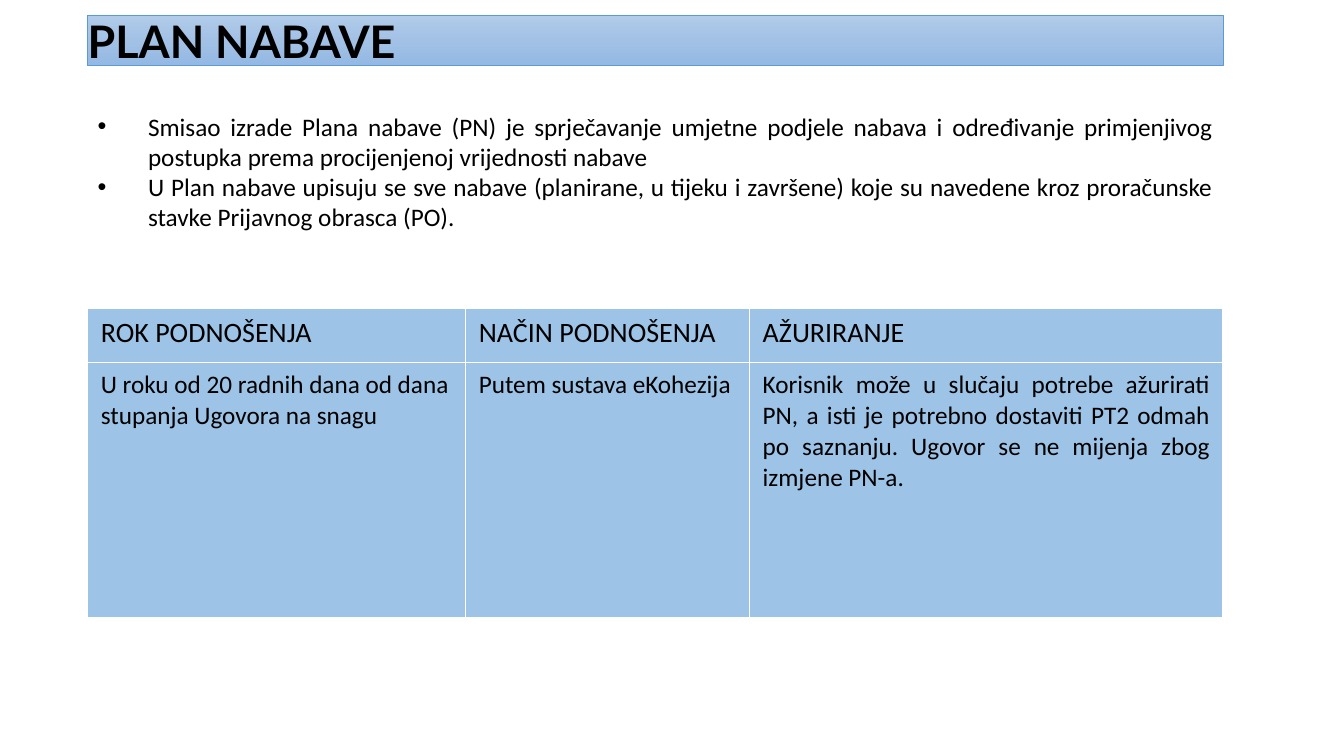
from copy import deepcopy

from lxml.etree import SubElement
from pptx import Presentation
from pptx.dml.color import RGBColor
from pptx.enum.shapes import MSO_SHAPE as Shape
from pptx.enum.text import MSO_ANCHOR as Anchor, PP_ALIGN as Align
from pptx.oxml.ns import qn
from pptx.util import Inches, Pt

# Content
TITLE = "PLAN NABAVE"
BULLETS = [
    "Smisao izrade Plana nabave (PN) je sprječavanje umjetne podjele nabava i određivanje "
    "primjenjivog postupka prema procijenjenoj vrijednosti nabave",
    "U Plan nabave upisuju se sve nabave (planirane, u tijeku i završene) koje su navedene "
    "kroz proračunske stavke Prijavnog obrasca (PO).",
]
TABLE = [
    ["ROK PODNOŠENJA", "NAČIN PODNOŠENJA", "AŽURIRANJE"],
    ["U roku od 20 radnih dana od dana stupanja Ugovora na snagu",
     "Putem sustava eKohezija",
     "Korisnik može u slučaju potrebe ažurirati PN, a isti je potrebno dostaviti PT2 odmah "
     "po saznanju. Ugovor se ne mijenja zbog izmjene PN-a."],
]

# Colours
BLACK = RGBColor(0x00, 0x00, 0x00)
WHITE = RGBColor(0xFF, 0xFF, 0xFF)
OUTLINE = RGBColor(0x5B, 0x9B, 0xD5)
CELL_BLUE = RGBColor(0x9D, 0xC3, 0xE6)
BANNER = [(0, RGBColor(0xB1, 0xCB, 0xE9)),
          (0.5, RGBColor(0xA3, 0xC1, 0xE5)),
          (1, RGBColor(0x93, 0xB9, 0xE4))]

# Layout: one column shared by all parts, in inches
LEFT, WIDTH = 0.87, 11.26
COLUMN_SHARES = [0.333, 0.25, 0.417]
ROW_HEIGHTS = [0.54, 2.53]
ROW_SIZES = [20, 18]
INDENT = 0.5


def write(frame, lines, size=18, font="Calibri", bold=False, align=Align.LEFT,
          bullet=False, margins=(0.1, 0.05), anchor=Anchor.TOP):
    frame.word_wrap = True
    frame.vertical_anchor = anchor
    frame.margin_left = frame.margin_right = Inches(margins[0])
    frame.margin_top = frame.margin_bottom = Inches(margins[1])
    for number, line in enumerate(lines):
        para = frame.add_paragraph() if number else frame.paragraphs[0]
        para.alignment = align
        if bullet:
            props = para._p.get_or_add_pPr()
            props.set("marL", str(Inches(INDENT)))
            props.set("indent", str(-Inches(INDENT)))
            SubElement(props, qn("a:buFont"), typeface="Arial")
            SubElement(props, qn("a:buChar"), char="•")
        span = para.add_run()
        span.text = line
        span.font.size, span.font.name, span.font.bold = Pt(size), font, bold
        span.font.color.rgb = BLACK


def add_borders(cell, color, points):
    props = cell._tc.get_or_add_tcPr()
    for place, side in enumerate(("a:lnL", "a:lnR", "a:lnT", "a:lnB")):
        line = props.makeelement(qn(side), {"w": str(Pt(points))})
        fill = SubElement(line, qn("a:solidFill"))
        SubElement(fill, qn("a:srgbClr"), val=str(color))
        props.insert(place, line)


def add_banner(page):
    box = page.shapes.add_shape(Shape.RECTANGLE, Inches(LEFT), Inches(0.15),
                                Inches(WIDTH), Inches(0.5))
    box.shadow.inherit = False
    box.line.color.rgb, box.line.width = OUTLINE, Pt(0.5)
    box.fill.gradient()
    box.fill.gradient_angle = 270
    stops = box._element.spPr.find(qn("a:gradFill")).find(qn("a:gsLst"))
    stops.insert(1, deepcopy(stops[0]))
    for stop, (position, color) in zip(box.fill.gradient_stops, BANNER):
        stop.position, stop.color.rgb = position, color
    write(box.text_frame, [TITLE], size=32, font="Lato", bold=True,
          margins=(0, 0), anchor=Anchor.MIDDLE)


def add_deadlines(page):
    table = page.shapes.add_table(len(TABLE), len(COLUMN_SHARES), Inches(LEFT), Inches(3.06),
                                  Inches(WIDTH), Inches(sum(ROW_HEIGHTS))).table
    for column, share in zip(table.columns, COLUMN_SHARES):
        column.width = Inches(WIDTH * share)
    for r, texts in enumerate(TABLE):
        table.rows[r].height = Inches(ROW_HEIGHTS[r])
        for c, text in enumerate(texts):
            cell = table.cell(r, c)
            cell.fill.solid()
            cell.fill.fore_color.rgb = CELL_BLUE
            add_borders(cell, WHITE, 1)
            justified = r == 1 and c == 2
            write(cell.text_frame, [text], size=ROW_SIZES[r],
                  align=Align.JUSTIFY if justified else Align.LEFT)
            cell.margin_left = cell.margin_right = Inches(0.13)
            cell.margin_top = cell.margin_bottom = Inches(0.07)


def main():
    deck = Presentation()
    deck.slide_width, deck.slide_height = Inches(13.33), Inches(7.5)
    page = deck.slides.add_slide(deck.slide_layouts[6])

    # Title banner
    add_banner(page)

    # Purpose of the plan
    box = page.shapes.add_textbox(Inches(LEFT), Inches(1.05), Inches(WIDTH), Inches(1.31))
    write(box.text_frame, BULLETS, align=Align.JUSTIFY, bullet=True)

    # Deadline, method and updates
    add_deadlines(page)
    deck.save("out.pptx")


if __name__ == "__main__":
    main()
